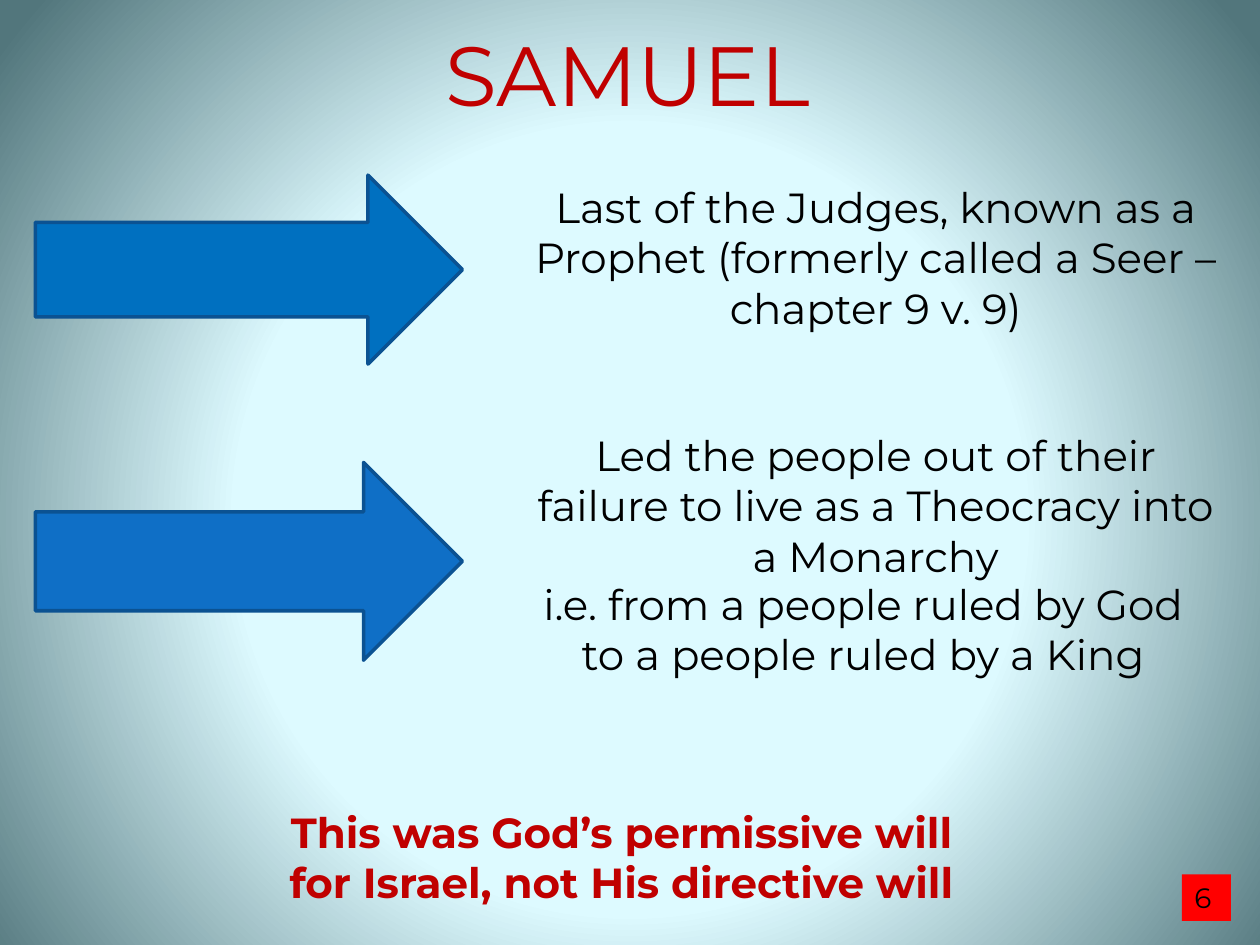
from pptx import Presentation
from pptx.dml.color import RGBColor
from pptx.enum.shapes import MSO_SHAPE
from pptx.enum.text import MSO_AUTO_SIZE, PP_ALIGN
from pptx.oxml import parse_xml
from pptx.oxml.ns import nsdecls, qn
from pptx.util import Inches, Pt

ARROW = MSO_SHAPE.RIGHT_ARROW
RECTANGLE = MSO_SHAPE.RECTANGLE
CENTER = PP_ALIGN.CENTER
LEFT = PP_ALIGN.LEFT
GROW = MSO_AUTO_SIZE.SHAPE_TO_FIT_TEXT

FONT = "Montserrat"
BLACK = "000000"
DARK_RED = "C00000"
RED = "FF0000"
ARROW_EDGE = "0B5292"
GLOW_STOPS = [(0, "DEFBFF"), (50, "DDFAFF"), (100, "52767C")]


def color(hex_value):
    return RGBColor.from_string(hex_value)


class SlideBuilder:
    def __init__(self, slide):
        self.slide = slide

    def glow_background(self, stops):
        self.slide.background.fill.gradient()
        gradient = next(self.slide.element.iter(qn("a:gradFill")))
        stop_xml = "".join(
            f'<a:gs pos="{position * 1000}"><a:srgbClr val="{shade}"/></a:gs>'
            for position, shade in stops
        )
        glow = parse_xml(
            f'<a:gradFill {nsdecls("a")} rotWithShape="1"><a:gsLst>{stop_xml}</a:gsLst>'
            '<a:path path="circle">'
            '<a:fillToRect l="10000" t="110000" r="10000" b="100000"/>'
            "</a:path></a:gradFill>"
        )
        gradient.getparent().replace(gradient, glow)

    def set_text(self, shape, lines, size, shade, bold=False, align=CENTER):
        frame = shape.text_frame
        frame.text = "\n".join(lines)
        frame.word_wrap = True
        frame.auto_size = GROW
        for paragraph in frame.paragraphs:
            paragraph.alignment = align
            for run in paragraph.runs:
                run.font.name = FONT
                run.font.size = Pt(size)
                run.font.bold = bold
                run.font.color.rgb = color(shade)

    def text(self, box, lines, size=24, shade=BLACK, bold=False):
        textbox = self.slide.shapes.add_textbox(*map(Inches, box))
        self.set_text(textbox, lines, size, shade, bold)

    def shape(self, preset, box, fill, edge=None):
        shape = self.slide.shapes.add_shape(preset, *map(Inches, box))
        shape.shadow.inherit = False
        shape.fill.solid()
        shape.fill.fore_color.rgb = color(fill)
        if edge:
            shape.line.color.rgb = color(edge)
            shape.line.width = Pt(2)
        else:
            shape.line.fill.background()
        return shape

    def page_number(self, box, number):
        badge = self.shape(RECTANGLE, box, RED)
        self.set_text(badge, [number], 16, BLACK, align=LEFT)


def main():
    deck = Presentation()
    deck.slide_width = Inches(10)
    deck.slide_height = Inches(7.5)
    builder = SlideBuilder(deck.slides.add_slide(deck.slide_layouts[6]))
    builder.glow_background(GLOW_STOPS)

    conclusion = [
        "This was God’s permissive will ",
        "for Israel, not His directive will ",
    ]
    builder.text((-0.02, 6.35, 10, 0.91), conclusion, shade=DARK_RED, bold=True)
    builder.page_number((9.38, 6.94, 0.39, 0.37), "6")

    for top, height, fill in [(1.39, 1.5, "0070C0"), (3.67, 1.57, "0F6FC6")]:
        builder.shape(ARROW, (0.28, top, 3.39, height), fill, ARROW_EDGE)

    roles = [
        (1.39, 5.64, "Last of the Judges, known as a Prophet (formerly called a Seer – chapter 9 v. 9)"),
        (3.36, 5.64, "Led the people out of their failure to live as a Theocracy into a Monarchy"),
        (4.54, 5.44, "i.e. from a people ruled by God to a people ruled by a King"),
    ]
    for top, width, role in roles:
        builder.text((4.13, top, width, 1.31), [role])

    builder.text((0, 0.13, 9.96, 0.91), ["SAMUEL"], size=48, shade=DARK_RED)
    deck.save("out.pptx")


if __name__ == "__main__":
    main()
